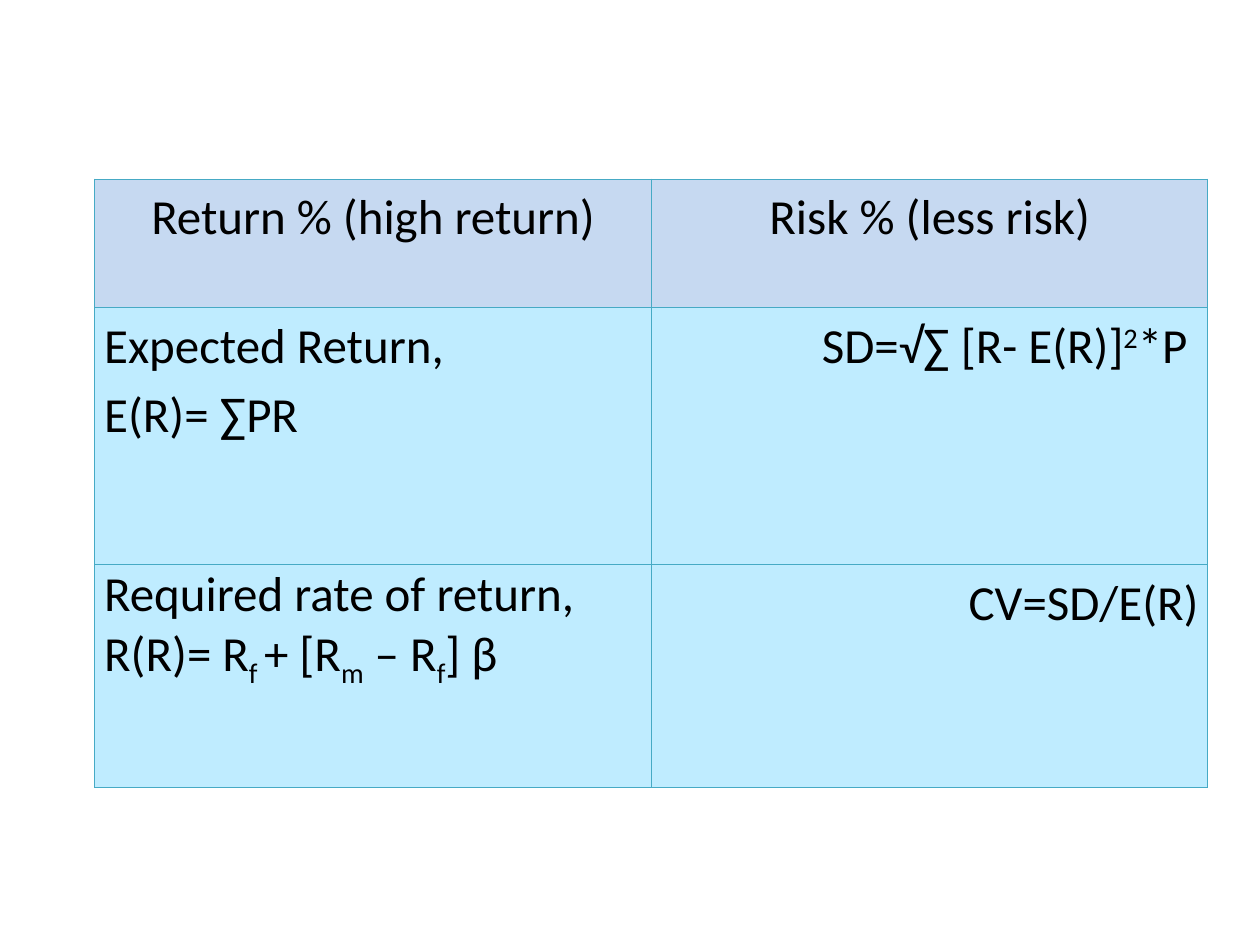
from lxml.etree import SubElement
from pptx import Presentation
from pptx.dml.color import RGBColor as RGB
from pptx.enum.text import PP_ALIGN as AL
from pptx.oxml.ns import qn
from pptx.util import Cm, Pt

COLORS = {"header": "C6D9F1", "body": "BFECFF", "border": "46AAC5", "text": "000000"}
SUP, SUB = 30, -25
COL_WIDTH = 11.22
ROW_HEIGHTS = [2.59, 5.18, 4.5]

# Each cell: alignment, line spacing, paragraphs of (text, baseline) runs.
CELLS = [
    [(AL.CENTER, 1.15, [[("Return % (high return)", 0)]]),
     (AL.CENTER, 1.15, [[("Risk % (less risk)", 0)]])],
    [(AL.LEFT, 1.15, [[("Expected Return,", 0)], [("E(R)= ∑PR", 0)]]),
     (AL.RIGHT, 1.15, [[("SD=√∑ [R- E(R)]", 0), ("2", SUP), ("*P ", 0)]])],
    [(AL.JUSTIFY, 1.0, [[("Required rate of return, ", 0)],
                        [("R(R)= R", 0), ("f ", SUB), ("+ [R", 0), ("m", SUB),
                         (" – R", 0), ("f", SUB), ("] β", 0)]]),
     (AL.RIGHT, 1.15, [[("CV=SD/E(R)", 0)]])],
]


def add_run(p, text, baseline):
    """Add one run, raised or lowered by a baseline percentage."""
    r = p.add_run()
    r.text = text
    r.font.name = "Calibri"
    r.font.size = Pt(28)
    r.font.color.rgb = RGB.from_string(COLORS["text"])
    if baseline:
        r._r.get_or_add_rPr().set("baseline", str(baseline * 1000))


def set_borders(cell):
    """Draw the same thin line on all four sides of a cell."""
    tc_pr = cell._tc.get_or_add_tcPr()
    for side in ("lnL", "lnR", "lnT", "lnB"):
        ln = SubElement(tc_pr, qn(f"a:{side}"), w=str(Pt(0.75)))
        fill = SubElement(ln, qn("a:solidFill"))
        SubElement(fill, qn("a:srgbClr"), val=COLORS["border"])


def fill_cell(cell, content, color):
    """Write and format one table cell."""
    align, spacing, paragraphs = content
    cell.margin_left = cell.margin_right = Cm(0.19)
    cell.margin_top = cell.margin_bottom = 0
    set_borders(cell)
    cell.fill.solid()
    cell.fill.fore_color.rgb = RGB.from_string(color)
    tf = cell.text_frame
    for i, runs in enumerate(paragraphs):
        p = tf.add_paragraph() if i else tf.paragraphs[0]
        p.alignment = align
        p.line_spacing = spacing
        for text, baseline in runs:
            add_run(p, text, baseline)


def add_formula_table(s):
    """Add the table of return and risk formulas."""
    shape = s.shapes.add_table(len(CELLS), 2, Cm(1.91), Cm(3.61),
                               Cm(2 * COL_WIDTH), Cm(sum(ROW_HEIGHTS)))
    table = shape.table
    table.horz_banding = False
    for col in table.columns:
        col.width = Cm(COL_WIDTH)
    for i, (height, row) in enumerate(zip(ROW_HEIGHTS, CELLS)):
        table.rows[i].height = Cm(height)
        for j, content in enumerate(row):
            fill_cell(table.cell(i, j), content, COLORS["body" if i else "header"])


def main():
    """Build and save the slide."""
    prs = Presentation()
    prs.slide_width, prs.slide_height = Cm(25.4), Cm(19.05)
    s = prs.slides.add_slide(prs.slide_layouts[6])
    add_formula_table(s)
    prs.save("out.pptx")


if __name__ == "__main__":
    main()
